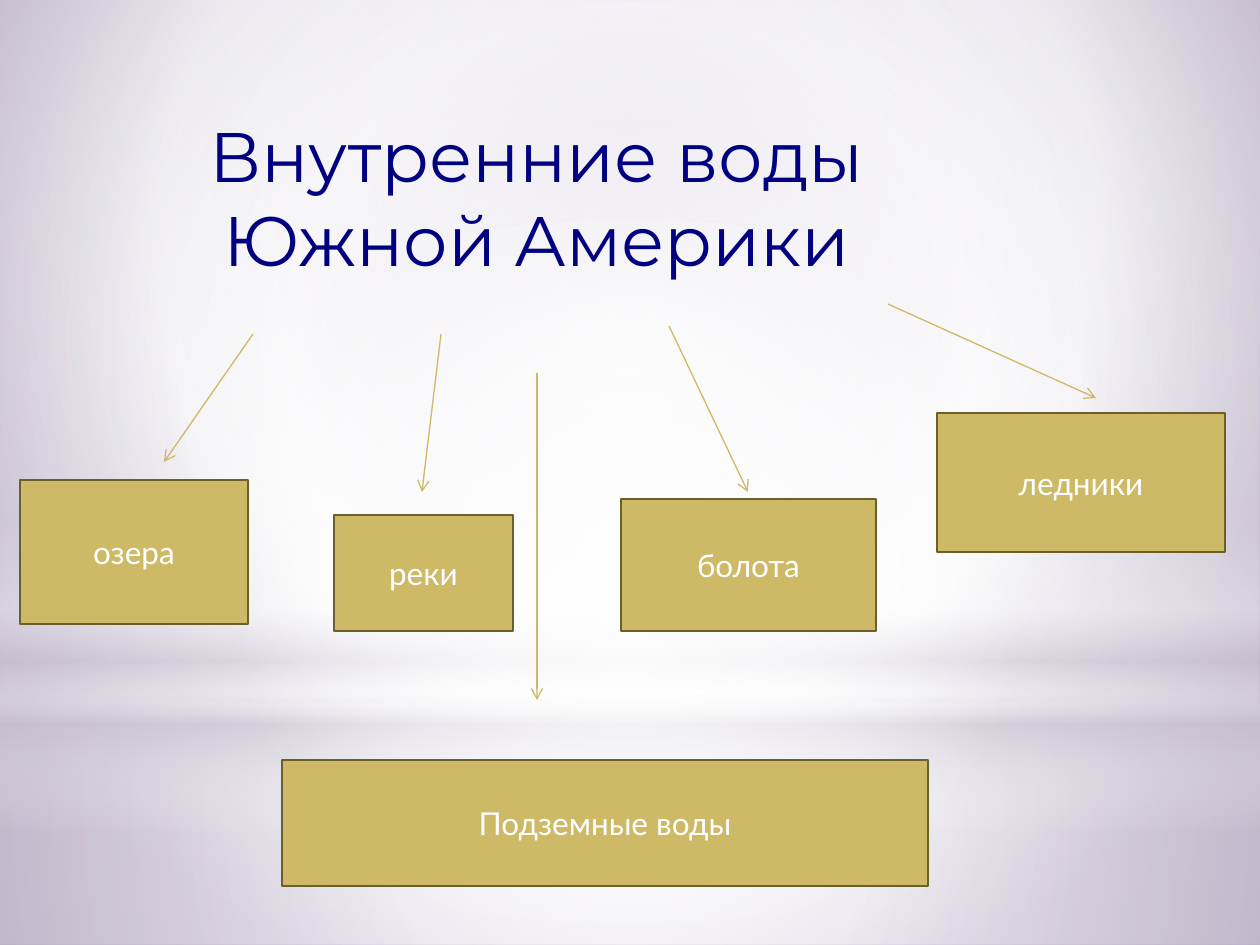
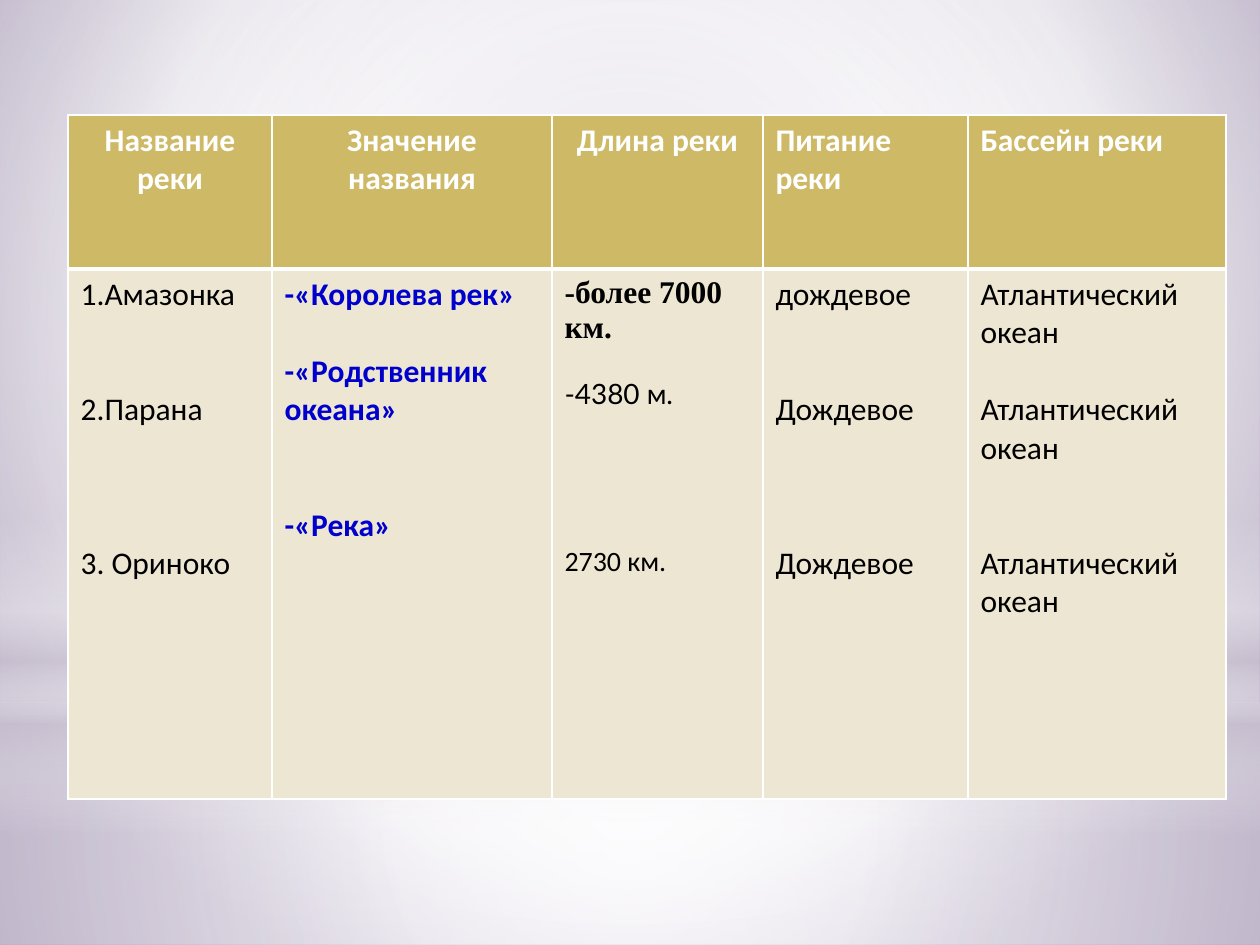
from lxml.etree import Element, SubElement
from pptx import Presentation
from pptx.dml.color import RGBColor
from pptx.enum.shapes import MSO_CONNECTOR, MSO_SHAPE
from pptx.enum.text import MSO_ANCHOR, PP_ALIGN
from pptx.oxml.ns import qn
from pptx.util import Emu, Pt

SCALE = 914400 / 126
SLIDE_BOX = (0, 0, 1260, 945)
COLORS = {
    "white": "FFFFFF",
    "black": "000000",
    "gold": "CEB966",
    "gold_dark": "6B5F2B",
    "cream": "EDE6D3",
    "navy": "000080",
    "blue": "0000CC",
    "lilac": "C1B7CD",
    "violet": "A191B5",
    "mist": "C9C2D1",
}
CENTER = (50, 50, 50, 50)

BACKGROUND_STOPS = [(0, "lilac", 100), (60, "white", 100), (100, "violet", 100)]
BACKDROP_LAYERS = [
    (MSO_SHAPE.RECTANGLE, (0, 703, 1260, 242), CENTER,
     [(0, "white", 91), (37, "white", 76), (100, "mist", 79)]),
    (MSO_SHAPE.RECTANGLE, (0, 0, 1260, 703), CENTER,
     [(0, "white", 89), (48, "white", 62), (100, "mist", 79)]),
    (MSO_SHAPE.RECTANGLE, (0, 519, 1260, 315), None,
     [(0, "white", 0), (29, "white", 30), (45, "mist", 40),
      (55, "white", 26), (65, "mist", 60), (100, "white", 0)]),
    (MSO_SHAPE.OVAL, (0, 220, 1260, 703), CENTER,
     [(0, "white", 100), (56, "white", 0)]),
]

WATER_TYPES = [
    ("озера", (20, 480, 228, 144), (253, 334), (164, 462)),
    ("реки", (334, 515, 179, 116), (441, 334), (422, 492)),
    ("ледники", (937, 413, 288, 139), (888, 304), (1096, 398)),
    ("болота", (621, 499, 255, 132), (669, 326), (748, 492)),
    ("Подземные воды", (282, 760, 646, 126), (537, 373), (537, 700)),
]

TABLE_BOX = (68, 115, 1158, 684)
COLUMN_WIDTHS = [204, 280, 211, 205, 258]
ROW_HEIGHTS = [154, 530]
HEADERS = [
    (["Название", "реки"], PP_ALIGN.CENTER),
    (["Значение названия"], PP_ALIGN.CENTER),
    (["Длина реки"], PP_ALIGN.CENTER),
    (["Питание реки"], PP_ALIGN.LEFT),
    (["Бассейн реки"], PP_ALIGN.LEFT),
]
PLAIN = ("Calibri", 18, "black", False)
MEANING = ("Calibri", 18, "blue", True)
RIVER_COLUMNS = [
    [("1.Амазонка", 0, PLAIN), ("2.Парана", 44, PLAIN), ("3. Ориноко", 66, PLAIN)],
    [("-«Королева рек»", 0, MEANING), ("-«Родственник океана»", 22, MEANING),
     ("-«Река»", 44, MEANING)],
    [("-более 7000 км.", 0, ("Times New Roman", 18, "black", True)),
     ("-4380 м.", 18, ("Lato", 16, "black", False)),
     ("2730 км.", 77, ("Calibri", 16, "black", False))],
    [("дождевое", 0, PLAIN), ("Дождевое", 44, PLAIN), ("Дождевое", 66, PLAIN)],
    [("Атлантический океан", gap, PLAIN) for gap in (0, 22, 44)],
]


def px(length):
    """Turn a length in px into EMU."""
    return Emu(round(length * SCALE))


def place(box, frame=SLIDE_BOX):
    """Return the EMU position of a box given relative to a frame."""
    left, top, width, height = box
    return px(frame[0] + left), px(frame[1] + top), px(width), px(height)


def rgb(name):
    """Look up a named colour."""
    return RGBColor.from_string(COLORS[name])


def style_font(paragraph, name, size, color, bold=False):
    """Set the font of a whole paragraph."""
    font = paragraph.font
    font.name, font.size, font.bold = name, Pt(size), bold
    font.color.rgb = rgb(color)


def gradient(stops, focus):
    """Build a circular gradient around a focus, or a vertical one without it."""
    fill = Element(qn("a:gradFill"), rotWithShape="1")
    stop_list = SubElement(fill, qn("a:gsLst"))
    for position, color, opacity in stops:
        stop = SubElement(stop_list, qn("a:gs"), pos=str(position * 1000))
        value = SubElement(stop, qn("a:srgbClr"), val=COLORS[color])
        if opacity < 100:
            SubElement(value, qn("a:alpha"), val=str(opacity * 1000))
    if focus:
        path = SubElement(fill, qn("a:path"), path="circle")
        sides = {side: str(share * 1000) for side, share in zip("ltrb", focus)}
        SubElement(path, qn("a:fillToRect"), **sides)
    else:
        SubElement(fill, qn("a:lin"), ang="5400000", scaled="0")
    return fill


def apply_gradient(owner, properties, stops, focus):
    """Swap the fill of a shape or background for a gradient."""
    owner.fill.solid()
    solid = properties.find(qn("a:solidFill"))
    properties.replace(solid, gradient(stops, focus))


def add_backdrop(slide, frame):
    """Draw the shared background and its translucent layers."""
    background = slide.background
    background.fill.solid()
    properties = slide.element.find(".//" + qn("p:bgPr"))
    apply_gradient(background, properties, BACKGROUND_STOPS, (20, 10, 20, 60))
    for kind, box, focus, stops in BACKDROP_LAYERS:
        layer = slide.shapes.add_shape(kind, *place(box, frame))
        layer.shadow.inherit = False
        layer.line.fill.background()
        apply_gradient(layer, layer.element.spPr, stops, focus)


def add_title(slide, box):
    """Add the centred slide title."""
    frame = slide.shapes.add_textbox(*place(box)).text_frame
    frame.word_wrap = True
    paragraph = frame.paragraphs[0]
    paragraph.text = "Внутренние воды Южной Америки"
    paragraph.alignment = PP_ALIGN.CENTER
    style_font(paragraph, "Montserrat", 40, "navy")


def add_arrow(slide, start, end):
    """Add a thin gold arrow between two points."""
    arrow = slide.shapes.add_connector(
        MSO_CONNECTOR.STRAIGHT, *map(px, start + end))
    arrow.line.color.rgb = rgb("gold")
    arrow.line.width = Pt(0.75)
    properties = arrow.element.spPr
    SubElement(properties.find(qn("a:ln")), qn("a:tailEnd"), type="arrow")
    SubElement(properties, qn("a:effectLst"))


def add_water_box(slide, label, box):
    """Add a gold box naming one type of inland water."""
    shape = slide.shapes.add_shape(MSO_SHAPE.RECTANGLE, *place(box))
    shape.shadow.inherit = False
    shape.fill.solid()
    shape.fill.fore_color.rgb = rgb("gold")
    shape.line.color.rgb = rgb("gold_dark")
    shape.line.width = Pt(1.25)
    frame = shape.text_frame
    frame.word_wrap = True
    frame.vertical_anchor = MSO_ANCHOR.MIDDLE
    paragraph = frame.paragraphs[0]
    paragraph.text = label
    paragraph.alignment = PP_ALIGN.CENTER
    style_font(paragraph, "Lato", 18, "white")


def style_cell(cell, color, top, bottom):
    """Give a cell white borders and a plain fill."""
    properties = cell._tc.get_or_add_tcPr()
    for side, width in zip("LRTB", (1, 1, top, bottom)):
        line = SubElement(properties, qn("a:ln" + side), w=str(Pt(width)))
        fill = SubElement(line, qn("a:solidFill"))
        SubElement(fill, qn("a:srgbClr"), val=COLORS["white"])
    cell.fill.solid()
    cell.fill.fore_color.rgb = rgb(color)


def fill_cell(cell, entries, alignment=PP_ALIGN.LEFT):
    """Write entries of text, gap before and font into a cell."""
    frame = cell.text_frame
    for index, (text, gap, font) in enumerate(entries):
        paragraph = frame.add_paragraph() if index else frame.paragraphs[0]
        paragraph.text = text
        paragraph.alignment = alignment
        paragraph.space_before = Pt(gap)
        style_font(paragraph, *font)


def add_river_table(slide, box):
    """Add the table of the rivers."""
    table = slide.shapes.add_table(2, len(HEADERS), *place(box)).table
    table.horz_banding = False
    for row, height in zip(table.rows, ROW_HEIGHTS):
        row.height = px(height)
    for index, width in enumerate(COLUMN_WIDTHS):
        table.columns[index].width = px(width)
        header, body = table.cell(0, index), table.cell(1, index)
        style_cell(header, "gold", 1, 3)
        style_cell(body, "cream", 3, 1)
        lines, alignment = HEADERS[index]
        header_font = ("Calibri", 18, "white", True)
        fill_cell(header, [(line, 0, header_font) for line in lines], alignment)
        fill_cell(body, RIVER_COLUMNS[index])


def build_waters_slide(slide):
    """Compose the diagram of inland waters."""
    add_title(slide, (164, 106, 745, 220))
    for label, box, start, end in WATER_TYPES:
        add_arrow(slide, start, end)
        add_water_box(slide, label, box)


def build_rivers_slide(slide):
    """Compose the slide with the river table."""
    add_river_table(slide, TABLE_BOX)


def main():
    """Build and save the presentation."""
    presentation = Presentation()
    presentation.slide_width, presentation.slide_height = map(px, SLIDE_BOX[2:])
    for build in (build_waters_slide, build_rivers_slide):
        slide = presentation.slides.add_slide(presentation.slide_layouts[6])
        add_backdrop(slide, SLIDE_BOX)
        build(slide)
    presentation.save("out.pptx")


if __name__ == "__main__":
    main()
